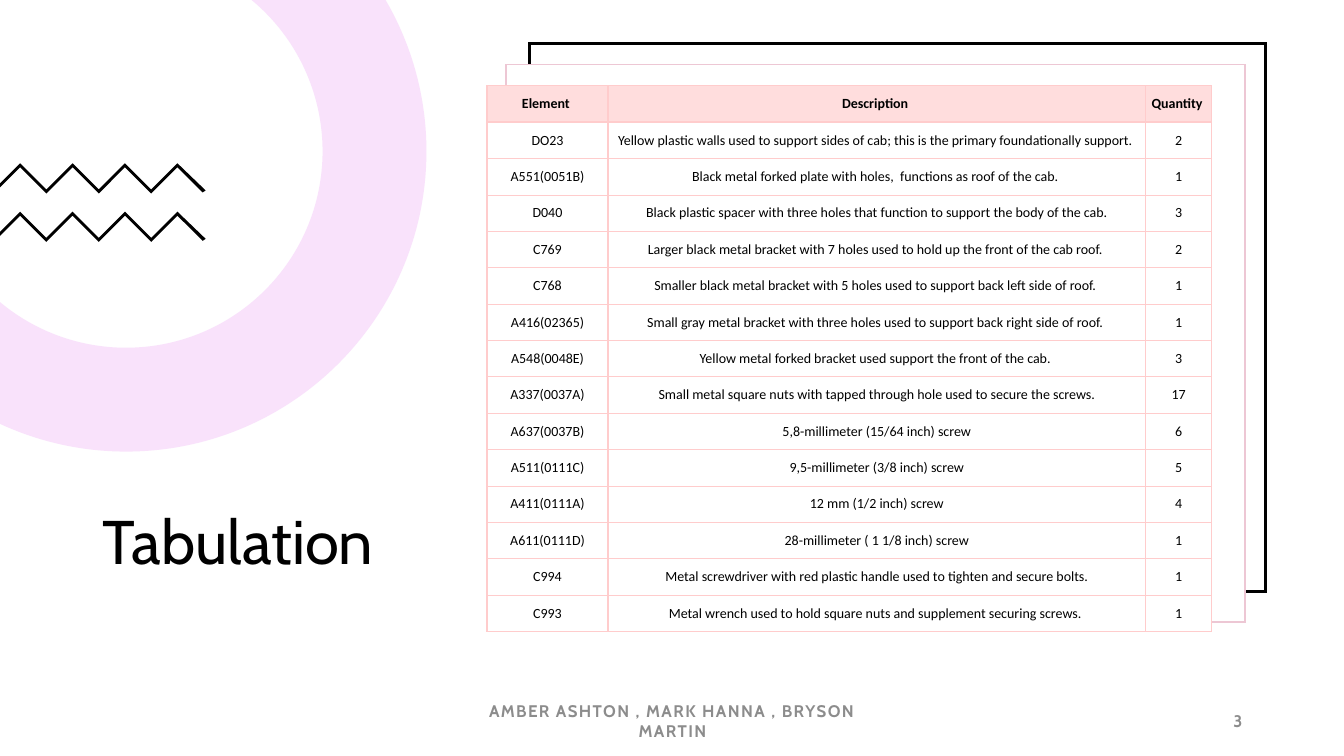
from itertools import product
from math import acos, asin, cos, pi, sin, tan

from lxml.etree import SubElement
from pptx import Presentation
from pptx.dml.color import RGBColor
from pptx.enum.shapes import MSO_SHAPE
from pptx.enum.text import MSO_ANCHOR, PP_ALIGN
from pptx.oxml.ns import qn
from pptx.util import Inches, Pt

WHITE = RGBColor(0xFF, 0xFF, 0xFF)
BLACK = RGBColor(0x00, 0x00, 0x00)
GRAY = RGBColor(0x8C, 0x8C, 0x8C)
ORCHID = RGBColor(0xE1, 0x6E, 0xEE)
ROSE = RGBColor(0xED, 0xC7, 0xD4)
PINK = RGBColor(0xFF, 0xDD, 0xDD)
GRID_PINK = RGBColor(0xFF, 0xCC, 0xCC)

PARTS = [
    ("Element ", "Description ", "Quantity "),
    ("DO23", "Yellow plastic walls used to support sides of cab; this is the primary foundationally support. ", "2"),
    ("A551(0051B)", "Black metal forked plate with holes,  functions as roof of the cab. ", "1"),
    ("D040", "Black plastic spacer with three holes that function to support the body of the cab.", "3"),
    ("C769", "Larger black metal bracket with 7 holes used to hold up the front of the cab roof. ", "2"),
    ("C768", "Smaller black metal bracket with 5 holes used to support back left side of roof. ", "1"),
    ("A416(02365)", "Small gray metal bracket with three holes used to support back right side of roof. ", "1"),
    ("A548(0048E)", "Yellow metal forked bracket used support the front of the cab. ", "3"),
    ("A337(0037A)", "Small metal square nuts with tapped through hole used to secure the screws.", "17"),
    ("A637(0037B)", "5,8-millimeter (15/64 inch) screw", "6"),
    ("A511(0111C)", "9,5-millimeter (3/8 inch) screw", "5"),
    ("A411(0111A)", "12 mm (1/2 inch) screw", "4"),
    ("A611(0111D)", "28-millimeter ( 1 1/8 inch) screw", "1"),
    ("C994", "Metal screwdriver with red plastic handle used to tighten and secure bolts.", "1"),
    ("C993", "Metal wrench used to hold square nuts and supplement securing screws. ", "1"),
]


class SlideBuilder:
    """Holds the slide and its style."""

    heading_font = "Cabin"
    table_font = "Calibri"

    def __init__(self, slide):
        self.slide = slide
        slide.background.fill.solid()
        slide.background.fill.fore_color.rgb = WHITE

    def style(self, paragraph, font, size, color, bold, align):
        paragraph.alignment = align
        paragraph.font.name = font
        paragraph.font.size = Pt(size)
        paragraph.font.bold = bold
        paragraph.font.color.rgb = color

    def outline(self, points, color):
        """Draw a filled closed shape through points given in inches."""
        corners = [(Inches(x), Inches(y)) for x, y in points]
        builder = self.slide.shapes.build_freeform(*corners[0])
        builder.add_line_segments(corners[1:])
        shape = builder.convert_to_shape()
        shape.shadow.inherit = False
        shape.line.fill.background()
        shape.fill.solid()
        shape.fill.fore_color.rgb = color
        return shape

    def ring(self, cx, cy, outer, inner, color, opacity):
        """Draw a ring cut off by the slide's top and left edges."""
        def at(radius, angle):
            return cx + radius * cos(angle), cy + radius * sin(angle)

        def stops(radius):
            return [(radius, a) for a in (-asin(cy / radius), 0, pi / 2, pi - acos(cx / radius))]

        anchors = stops(outer) + stops(inner)[::-1]
        shape = self.outline([at(*anchor) for anchor in anchors], color)
        tint = shape.fill._xPr.find(".//" + qn("a:srgbClr"))
        SubElement(tint, qn("a:alpha"), val=str(opacity * 1000))

        # Bend the sides that follow either circle
        sides = list(shape._element.iter(qn("a:lnTo")))
        for side, (r1, a1), (r2, a2) in zip(sides, anchors, anchors[1:]):
            if r1 != r2:
                continue
            pull = 4 / 3 * tan((a2 - a1) / 4)
            (x1, y1), (x2, y2) = at(r1, a1), at(r2, a2)
            handles = [(x1 - pull * (y1 - cy), y1 + pull * (x1 - cx)),
                       (x2 + pull * (y2 - cy), y2 - pull * (x2 - cx))]
            side.tag = qn("a:cubicBezTo")
            for i, (x, y) in enumerate(handles):
                point = SubElement(side, qn("a:pt"), x=str(Inches(x)), y=str(Inches(y)))
                side.insert(i, point)

    def zigzag(self, top):
        step, thickness = 0.26, 0.04
        peaks = [(0.2 + step * i, top + step * (i % 2)) for i in range(7)]
        lower = [(x, y + thickness) for x, y in reversed(peaks)]
        ends = [(2.04, top + 0.27), (2.01, top + 0.29)]
        self.outline([(0, top + 0.2), *peaks, *ends, *lower, (0, top + 0.24)], BLACK)

    def frame(self, left, top, width, height, color, weight):
        shape = self.slide.shapes.add_shape(
            MSO_SHAPE.RECTANGLE, Inches(left), Inches(top), Inches(width), Inches(height))
        shape.shadow.inherit = False
        shape.fill.solid()
        shape.fill.fore_color.rgb = WHITE
        shape.line.color.rgb = color
        shape.line.width = Pt(weight)
        SubElement(shape.line._get_or_add_ln(), qn("a:miter"), lim="800000")

    def text(self, words, left, top, width, height, size, color, align, bold=False):
        box = self.slide.shapes.add_textbox(
            Inches(left), Inches(top), Inches(width), Inches(height))
        box.text_frame.word_wrap = True
        box.text_frame.vertical_anchor = MSO_ANCHOR.MIDDLE
        paragraph = box.text_frame.paragraphs[0]
        paragraph.text = words
        self.style(paragraph, self.heading_font, size, color, bold, align)
        return paragraph

    def footer(self, words, left, width, align):
        paragraph = self.text(words, left, 6.95, width, 0.4, 12, GRAY, align, bold=True)
        paragraph.space_after = Pt(6)
        paragraph._p.pPr.find(qn("a:defRPr")).set("spc", "100")

    def cell_borders(self, cell, color, weights):
        properties = cell._tc.get_or_add_tcPr()
        for side, weight in weights.items():
            line = SubElement(properties, qn(f"a:ln{side}"), w=str(Pt(weight)))
            SubElement(SubElement(line, qn("a:solidFill")), qn("a:srgbClr"), val=str(color))

    def table(self, rows, left, top, height, widths):
        table = self.slide.shapes.add_table(
            len(rows), len(widths), Inches(left), Inches(top),
            Inches(sum(widths)), Inches(height)).table
        table.first_row = table.horz_banding = False
        for column, width in zip(table.columns, widths):
            column.width = Inches(width)
        for r, c in product(range(len(rows)), range(len(widths))):
            header = r == 0
            cell = table.cell(r, c)
            cell.margin_left = cell.margin_right = cell.margin_top = cell.margin_bottom = 0
            cell.vertical_anchor = MSO_ANCHOR.MIDDLE
            self.cell_borders(cell, GRID_PINK, {
                "L": 1, "R": 1, "T": 1 if r < 2 else 0.5, "B": 1 if header else 0.5})
            cell.fill.solid()
            cell.fill.fore_color.rgb = PINK if header else WHITE
            paragraph = cell.text_frame.paragraphs[0]
            paragraph.text = rows[r][c]
            self.style(paragraph, self.table_font, 10, BLACK, header, PP_ALIGN.CENTER)


def main():
    deck = Presentation()
    deck.slide_width, deck.slide_height = Inches(13.33), Inches(7.5)
    page = SlideBuilder(deck.slides.add_slide(deck.slide_layouts[6]))

    # Corner decoration
    for top in (1.62, 2.1):
        page.zigzag(top)
    page.ring(1.25, 1.5, 2.98, 1.95, ORCHID, 20)

    # Title and footer
    title = page.text("Tabulation ", 0.92, 4.05, 3.5, 2.71, 44, BLACK, PP_ALIGN.LEFT)
    title.line_spacing = 0.9
    page.footer("AMBER ASHTON , MARK HANNA , BRYSON MARTIN", 4.42, 4.5, PP_ALIGN.CENTER)
    page.footer("3", 9.42, 3, PP_ALIGN.RIGHT)

    # Stacked frames behind the parts table
    page.frame(5.25, 0.43, 7.3, 5.44, BLACK, 2.25)
    page.frame(5.02, 0.64, 7.33, 5.53, ROSE, 1)
    page.table(PARTS, 4.83, 0.85, 5.42, (1.2, 5.33, 0.66))

    deck.save("out.pptx")


if __name__ == "__main__":
    main()
